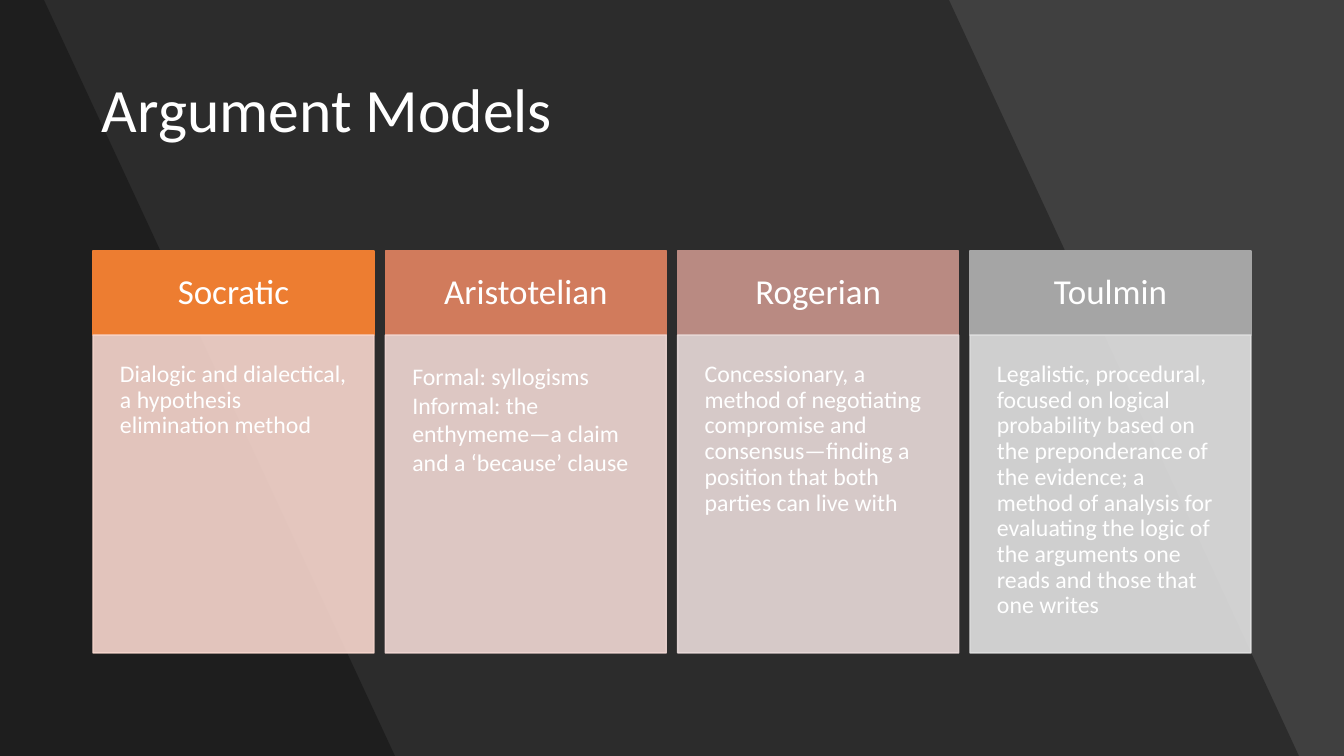
import pptx
import pptx.util
import pptx.dml.color
import pptx.enum.shapes
import pptx.enum.text
import lxml.etree

TITLE = "Argument Models"
MODELS = [
    ("Socratic", "Dialogic and dialectical, a hypothesis elimination method", 0.9),
    ("Aristotelian", "Formal: syllogisms Informal: the enthymeme—a claim and a ‘because’ clause", 1.0),
    ("Rogerian", "Concessionary, a method of negotiating compromise and consensus—finding a position "
     "that both parties can live with", 0.9),
    ("Toulmin", "Legalistic, procedural, focused on logical probability based on the preponderance of "
     "the evidence; a method of analysis for evaluating the logic of the arguments one reads and "
     "those that one writes", 0.9),
]
COLOURS = {
    "background": "404040", "shade": "000000", "text": "FFFFFF",
    "Socratic": ("ED7D31", "F8D7CE"),
    "Aristotelian": ("D17B5C", "F1D8D4"),
    "Rogerian": ("B98A82", "E9DBDA"),
    "Toulmin": ("A5A5A5", "E1E1E1"),
}
SCALE = 914400 / 100.8
SLIDE_WIDTH, SLIDE_HEIGHT = 1344, 756
SHADES = [(949, 1299), (44, 395)]
TITLE_BOX = (92, 40, 1160, 146)
ROW_LEFT, ROW_RIGHT, COLUMN_WIDTH = 93, 1251, 281
HEADER_TOP, HEADER_HEIGHT, BODY_HEIGHT = 251, 84, 318

Anchor = pptx.enum.text.MSO_ANCHOR
Align = pptx.enum.text.PP_ALIGN


def emu(pixels):
    return pptx.util.Emu(round(pixels * SCALE))


def rgb(colour):
    return pptx.dml.color.RGBColor.from_string(colour)


def paint(fill, colour, opacity):
    fill.solid()
    fill.fore_color.rgb = rgb(colour)
    if opacity < 100:
        for element in fill._xPr.iter(pptx.oxml.ns.qn("a:srgbClr")):
            alpha = lxml.etree.SubElement(element, pptx.oxml.ns.qn("a:alpha"))
            alpha.set("val", str(opacity * 1000))


def write(shape, text, size, insets, anchor=Anchor.TOP, align=Align.LEFT, spacing=0.9):
    frame = shape.text_frame
    frame.word_wrap = True
    frame.vertical_anchor = anchor
    frame.margin_left = frame.margin_right = emu(insets[0])
    frame.margin_top = frame.margin_bottom = emu(insets[1])
    paragraph = frame.paragraphs[0]
    paragraph.alignment = align
    paragraph.line_spacing = spacing
    run = paragraph.add_run()
    run.text = text
    run.font.name = "Calibri"
    run.font.size = pptx.util.Pt(size)
    run.font.color.rgb = rgb(COLOURS["text"])


def add_shade(slide, top_right, bottom_right):
    builder = slide.shapes.build_freeform(0, 0, scale=SCALE)
    builder.add_line_segments([(top_right, 0), (bottom_right, SLIDE_HEIGHT), (0, SLIDE_HEIGHT)])
    shape = builder.convert_to_shape()
    shape.shadow.inherit = False
    paint(shape.fill, COLOURS["shade"], 30)
    shape.line.fill.background()


def add_panel(slide, box, colour, opacity=100):
    shape = slide.shapes.add_shape(pptx.enum.shapes.MSO_SHAPE.RECTANGLE, *map(emu, box))
    shape.shadow.inherit = False
    paint(shape.fill, colour, opacity)
    shape.line.width = pptx.util.Pt(1)
    paint(shape.line.fill, colour, opacity)
    return shape


def main():
    presentation = pptx.Presentation()
    presentation.slide_width = emu(SLIDE_WIDTH)
    presentation.slide_height = emu(SLIDE_HEIGHT)
    slide = presentation.slides.add_slide(presentation.slide_layouts[6])
    paint(slide.background.fill, COLOURS["background"], 100)
    for top_right, bottom_right in SHADES:
        add_shade(slide, top_right, bottom_right)

    title = slide.shapes.add_textbox(*map(emu, TITLE_BOX))
    write(title, TITLE, 44, (10, 5), anchor=Anchor.MIDDLE)

    pitch = (ROW_RIGHT - ROW_LEFT - COLUMN_WIDTH) / (len(MODELS) - 1)
    for index, (name, description, spacing) in enumerate(MODELS):
        left = ROW_LEFT + index * pitch
        header_colour, body_colour = COLOURS[name]
        header = add_panel(slide, (left, HEADER_TOP, COLUMN_WIDTH, HEADER_HEIGHT), header_colour)
        write(header, name, 25, (22, 22), anchor=Anchor.MIDDLE, align=Align.CENTER)
        body_box = (left, HEADER_TOP + HEADER_HEIGHT, COLUMN_WIDTH, BODY_HEIGHT)
        body = add_panel(slide, body_box, body_colour, opacity=90)
        write(body, description, 17, (27, 27), spacing=spacing)

    presentation.save("out.pptx")


if __name__ == "__main__":
    main()
